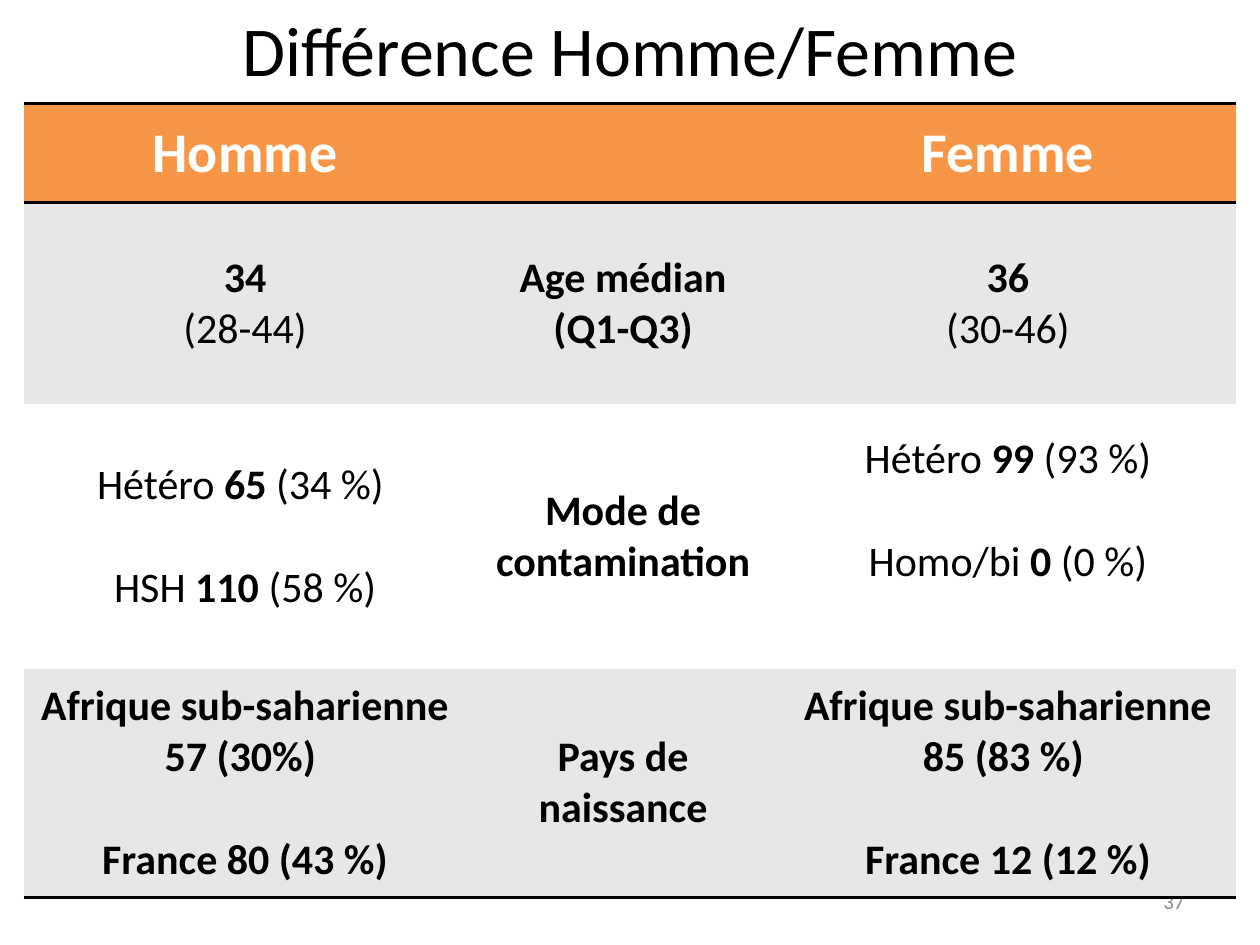
from lxml import etree
from pptx import Presentation
from pptx.dml.color import RGBColor
from pptx.enum import text
from pptx.oxml.ns import qn
from pptx.util import Inches, Pt

FONT = "Calibri"
BLANK_LINE = 29.3
COLUMN_WIDTHS = (3.51, 2.49, 3.62)
ROW_HEIGHTS = (0.79, 1.6, 2.1, 1.81)
ROW_FILLS = ("F79646", "E7E7E7", "FFFFFF", "E7E7E7")
HEADER = 0
LAST = len(ROW_HEIGHTS) - 1

# Each paragraph: (gap before in points, [(words, bold), ...])


def line(*runs, gap=0):
    return gap, runs


def bold(words, gap=0):
    return line((words, True), gap=gap)


def count(label, number, share, gap=0):
    return line((label, False), (number, True), (share, False), gap=gap)


ROWS = (
    ([bold("Homme")], [], [bold("Femme")]),
    (
        [bold("34"), line(("(28-44)", False))],
        [bold("Age médian"), bold("(Q1-Q3)")],
        [bold("36"), line(("(30-46)", False))],
    ),
    (
        [count("Hétéro ", "65", " (34 %) "), count("HSH ", "110", " (58 %)", BLANK_LINE)],
        [bold("Mode de contamination")],
        [count("Hétéro ", "99", " (93 %)"), count("Homo/bi ", "0", " (0 %)", BLANK_LINE)],
    ),
    (
        [bold("Afrique sub-saharienne"), bold("57 (30%) "), bold("France 80 (43 %)", BLANK_LINE)],
        [bold("Pays de naissance")],
        [bold("Afrique sub-saharienne"), bold("85 (83 %) "), bold("France 12 (12 %)", BLANK_LINE)],
    ),
)


def color(value):
    return RGBColor.from_string(value)


def format_run(run, size, value, is_bold=False):
    run.font.name = FONT
    run.font.size = Pt(size)
    run.font.bold = is_bold
    run.font.color.rgb = color(value)


def add_label(slide, box, words, size, value, alignment, anchor):
    shape = slide.shapes.add_textbox(*map(Inches, box))
    frame = shape.text_frame
    frame.word_wrap = True
    frame.vertical_anchor = anchor
    frame.text = words
    paragraph = frame.paragraphs[0]
    paragraph.alignment = alignment
    format_run(paragraph.runs[0], size, value)


def set_borders(cell, ruled_sides):
    properties = cell._tc.get_or_add_tcPr()
    for position, side in enumerate("LRTB"):
        border = etree.Element(qn(f"a:ln{side}"))
        if side in ruled_sides:
            border.set("w", str(Pt(2)))
            fill = etree.SubElement(border, qn("a:solidFill"))
            etree.SubElement(fill, qn("a:srgbClr"), val="000000")
        else:
            etree.SubElement(border, qn("a:noFill"))
        properties.insert(position, border)


def fill_cell(cell, paragraphs, size, value):
    cell.vertical_anchor = text.MSO_ANCHOR.MIDDLE
    frame = cell.text_frame
    for index, (gap, runs) in enumerate(paragraphs):
        paragraph = frame.add_paragraph() if index else frame.paragraphs[0]
        paragraph.alignment = text.PP_ALIGN.CENTER
        paragraph.space_before = Pt(gap)
        for words, is_bold in runs:
            run = paragraph.add_run()
            run.text = words
            format_run(run, size, value, is_bold)


def add_comparison(slide, box):
    table = slide.shapes.add_table(
        len(ROW_HEIGHTS), len(COLUMN_WIDTHS), *map(Inches, box)
    ).table
    for column, width in zip(table.columns, COLUMN_WIDTHS):
        column.width = Inches(width)
    for index, contents in enumerate(ROWS):
        table.rows[index].height = Inches(ROW_HEIGHTS[index])
        size, value = (32, "FFFFFF") if index == HEADER else (24, "000000")
        ruled_sides = {HEADER: "TB", HEADER + 1: "T", LAST: "B"}.get(index, "")
        for column, paragraphs in enumerate(contents):
            cell = table.cell(index, column)
            cell.fill.solid()
            cell.fill.fore_color.rgb = color(ROW_FILLS[index])
            set_borders(cell, ruled_sides)
            fill_cell(cell, paragraphs, size, value)
    table.cell(2, 2).margin_bottom = Inches(0.46)


def main():
    presentation = Presentation()
    presentation.slide_width = Inches(10)
    presentation.slide_height = Inches(7.5)
    slide = presentation.slides.add_slide(presentation.slide_layouts[6])
    add_label(slide, (7.17, 6.95, 2.33, 0.4), "37", 12, "8C8C8C",
              text.PP_ALIGN.RIGHT, text.MSO_ANCHOR.MIDDLE)
    add_label(slide, (0, 0, 10, 0.77), "Différence Homme/Femme", 40, "000000",
              text.PP_ALIGN.CENTER, text.MSO_ANCHOR.TOP)
    add_comparison(slide, (0.19, 0.82, sum(COLUMN_WIDTHS), sum(ROW_HEIGHTS)))
    presentation.save("out.pptx")


if __name__ == "__main__":
    main()
